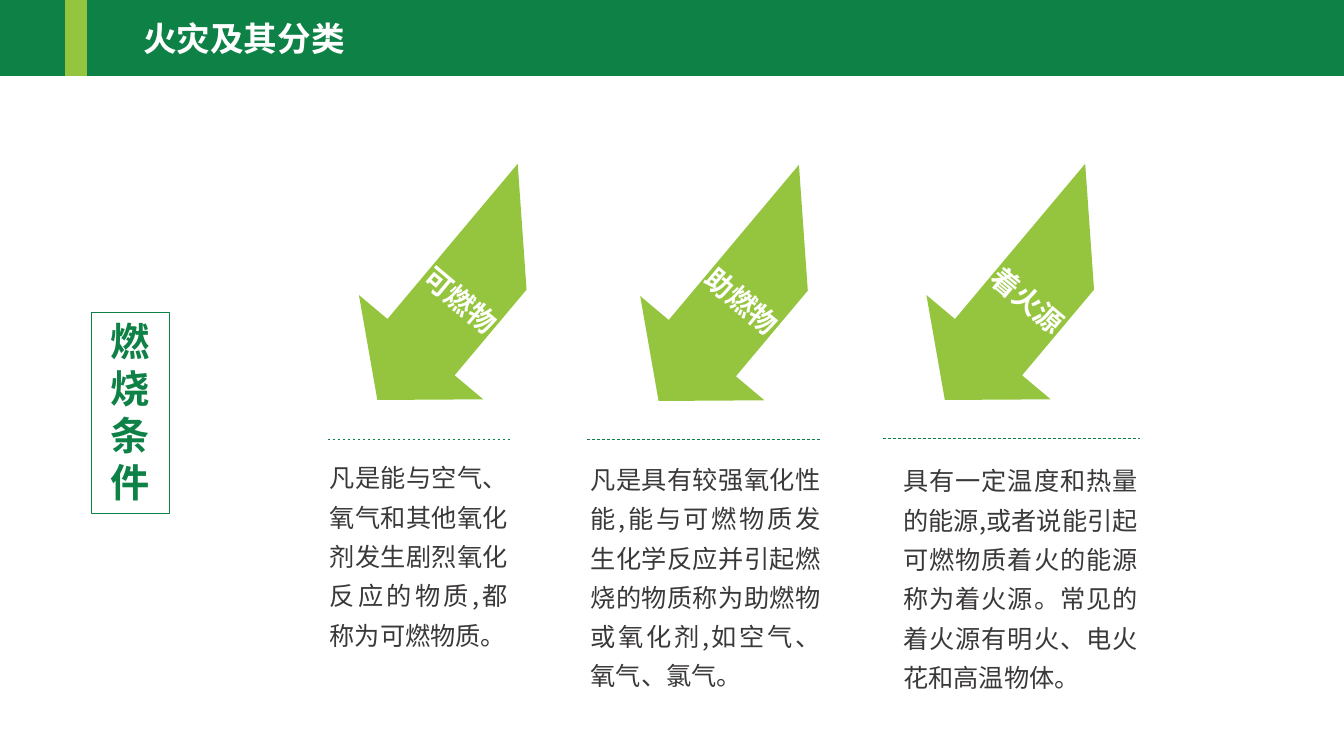
from lxml.etree import SubElement
from pptx import Presentation
from pptx.dml.color import RGBColor
from pptx.enum.dml import MSO_LINE_DASH_STYLE as Dash
from pptx.enum.shapes import MSO_CONNECTOR as Connector, MSO_SHAPE as Shape
from pptx.enum.text import MSO_ANCHOR as Anchor, MSO_AUTO_SIZE as AutoSize, PP_ALIGN as Align
from pptx.oxml.ns import qn
from pptx.util import Inches, Pt

COLORS = {"green": "0E8146", "lime": "95C53E", "white": "FFFFFF", "text": "3B3838"}
FONT = "Noto Sans CJK SC"
COLUMNS, ROWS = 40, 22.5
COMPARISON_LAYOUT = 4

ARROW_ANGLE = 40
ARROW_OUTLINE = [(1.11, 0), (3.72, 2.7), (3.72, 6.03), (4.83, 6.03),
                 (2.43, 8.07), (0, 6.03), (1.11, 6.03)]

CONDITIONS = [
    {"name": "可燃物", "arrow": (11.4, 4.77), "rule": (9.75, 15.18, 13.08),
     "box": (9.81, 14.37, 5.31, 4.11),
     "text": "凡是能与空气、氧气和其他氧化剂发生剧烈氧化反应的物质,都称为可燃物质。"},
    {"name": "助燃物", "arrow": (19.77, 4.8), "rule": (17.46, 24.42, 13.08),
     "box": (17.58, 15, 6.84, 4.11),
     "text": "凡是具有较强氧化性能,能与可燃物质发生化学反应并引起燃烧的物质称为助燃物或氧化剂,如空气、氧气、氯气。"},
    {"name": "着火源", "arrow": (28.29, 4.77), "rule": (26.28, 33.93, 13.05),
     "box": (26.88, 15.03, 6.99, 4.14),
     "text": "具有一定温度和热量的能源,或者说能引起可燃物质着火的能源称为着火源。常见的着火源有明火、电火花和高温物体。"},
]


class SlideBuilder:
    def __init__(self, presentation, layout):
        self.column = presentation.slide_width / COLUMNS
        self.row = presentation.slide_height / ROWS
        self.slide = presentation.slides.add_slide(presentation.slide_layouts[layout])
        self.shapes = self.slide.shapes

    def x(self, columns):
        return round(columns * self.column)

    def y(self, rows):
        return round(rows * self.row)

    def frame(self, left, top, width, height):
        return self.x(left), self.y(top), self.x(width), self.y(height)

    def color(self, name):
        return RGBColor.from_string(COLORS[name])

    def paint(self, shape, fill=None, line=None, weight=1):
        shape.shadow.inherit = False
        if fill:
            shape.fill.solid()
            shape.fill.fore_color.rgb = self.color(fill)
        else:
            shape.fill.background()
        if line:
            shape.line.color.rgb = self.color(line)
            shape.line.width = Pt(weight)
        else:
            shape.line.fill.background()

    def set_text(self, shape, text, size, color, bold=True, align=Align.CENTER,
                 anchor=Anchor.MIDDLE, spacing=1.0):
        text_frame = shape.text_frame
        text_frame.text = text
        text_frame.word_wrap = True
        text_frame.auto_size = AutoSize.NONE
        text_frame.vertical_anchor = anchor
        paragraph = text_frame.paragraphs[0]
        paragraph.alignment = align
        paragraph.line_spacing = spacing
        paragraph.space_before = Pt(0)
        font = paragraph.runs[0].font
        font.name = FONT
        font.size = Pt(size)
        font.bold = bold
        font.color.rgb = self.color(color)
        SubElement(font._element, qn("a:ea"), typeface=FONT)

    def rectangle(self, box, fill=None, line=None, weight=1):
        shape = self.shapes.add_shape(Shape.RECTANGLE, *self.frame(*box))
        self.paint(shape, fill, line, weight)
        return shape

    def arrow(self, left, top, name):
        points = [(self.x(left + x), self.y(top + y)) for x, y in ARROW_OUTLINE]
        builder = self.shapes.build_freeform(*points[0])
        builder.add_line_segments(points[1:], close=True)
        shape = builder.convert_to_shape()
        shape.rotation = ARROW_ANGLE
        self.paint(shape, "lime")
        self.set_text(shape, name, 20, "white", spacing=1.3)

    def dashed_rule(self, start, end, row):
        connector = self.shapes.add_connector(
            Connector.STRAIGHT, self.x(start), self.y(row), self.x(end), self.y(row))
        connector.line.color.rgb = self.color("green")
        connector.line.width = Pt(0.5)
        connector.line.dash_style = Dash.DASH
        SubElement(connector._element.spPr, qn("a:effectLst"))

    def place(self, placeholder, box):
        placeholder.left, placeholder.top, placeholder.width, placeholder.height = self.frame(*box)
        element = placeholder._element
        element.getparent().append(element)

    def title(self, text, box):
        title = self.shapes.title
        self.place(title, box)
        self.set_text(title, text, 24, "white", align=Align.LEFT)

    def body(self, index, text, box):
        body = self.slide.placeholders[index]
        self.place(body, box)
        self.set_text(body, text, 18, "text", bold=False, align=Align.JUSTIFY, spacing=1.3)
        text_frame = body.text_frame
        text_frame.margin_left = text_frame.margin_right = 0
        text_frame.margin_top = text_frame.margin_bottom = 0
        properties = text_frame.paragraphs[0]._p.get_or_add_pPr()
        properties.set("marL", "0")
        properties.set("indent", "0")
        SubElement(properties, qn("a:buNone"))

    def remove_empty_placeholders(self):
        for placeholder in list(self.slide.placeholders):
            if not placeholder.text_frame.text:
                element = placeholder._element
                element.getparent().remove(element)


def main():
    presentation = Presentation()
    presentation.slide_width = Inches(13.33)
    presentation.slide_height = Inches(7.5)
    builder = SlideBuilder(presentation, COMPARISON_LAYOUT)

    builder.rectangle((0, 0, COLUMNS, 2.25), "green", "green")
    builder.rectangle((1.95, 0, 0.63, 2.25), "lime", "lime")
    builder.title("火灾及其分类", (3.96, 0.39, 10.05, 1.5))

    label = builder.rectangle((2.73, 9.3, 2.31, 5.97), line="green", weight=0.75)
    builder.set_text(label, "燃烧条件", 28, "green", anchor=Anchor.TOP)

    for index, condition in enumerate(CONDITIONS, start=1):
        builder.arrow(*condition["arrow"], condition["name"])
        builder.dashed_rule(*condition["rule"])
        builder.body(index, condition["text"], condition["box"])

    builder.remove_empty_placeholders()
    presentation.save("out.pptx")


if __name__ == "__main__":
    main()
